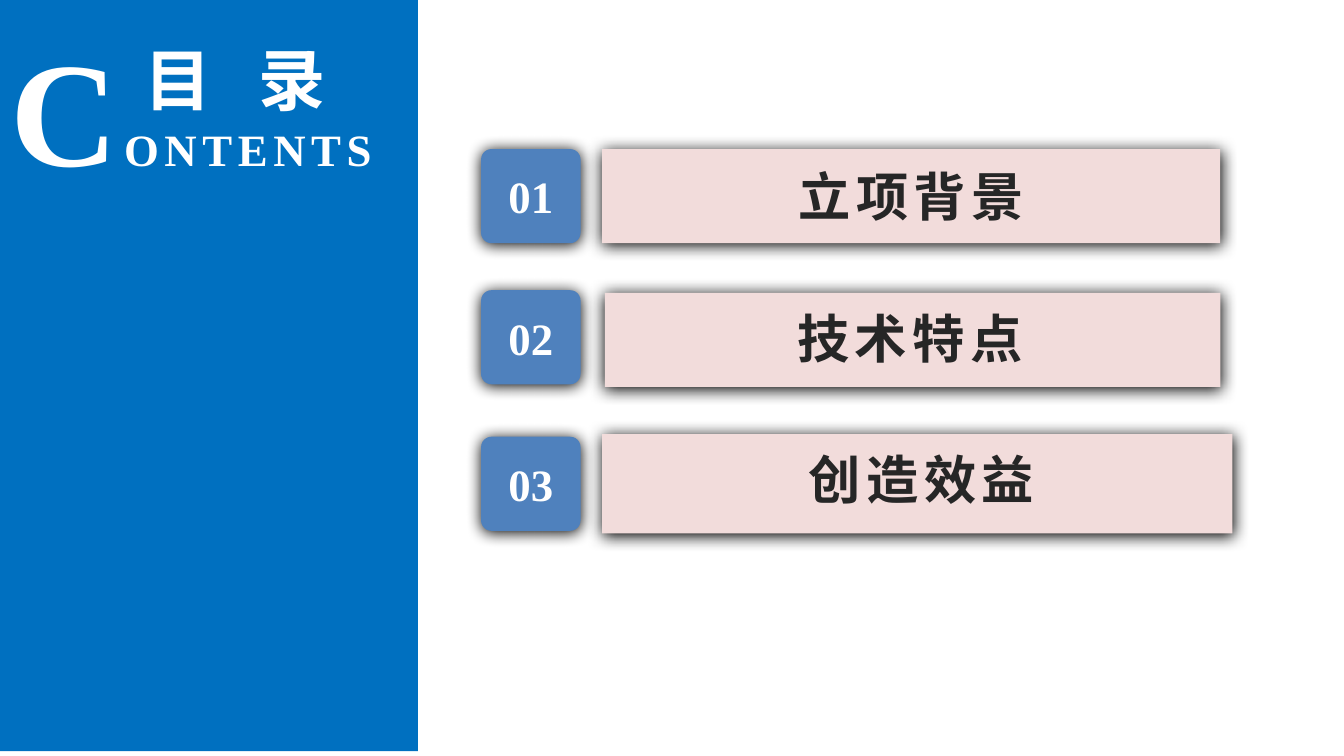
from lxml import etree
from pptx import Presentation
from pptx import util as u
from pptx.dml import color
from pptx.enum import shapes, text
from pptx.oxml import ns

PX = 4572
LATIN = "Times New Roman"
CHINESE = "Noto Sans CJK SC"


def px(*lengths):
    """Turn lengths in px, 200 to the inch, into EMU."""
    return [u.Emu(length * PX) for length in lengths]


def rgb(value):
    """Return the colour for a hex string."""
    return color.RGBColor.from_string(value)


def add_shadow(shape):
    """Give a shape a soft black shadow that falls downwards."""
    effects = shape._element.spPr.find(ns.qn("a:effectLst"))
    shadow = etree.SubElement(
        effects, ns.qn("a:outerShdw"), blurRad=str(u.Pt(8.5)), dist=str(u.Pt(1)),
        dir="5400000", algn="ctr", rotWithShape="0")
    etree.SubElement(shadow, ns.qn("a:srgbClr"), val="000000")


def add_block(slide, box, fill, kind=shapes.MSO_SHAPE.RECTANGLE, shadow=True):
    """Draw a filled shape without an outline."""
    shape = slide.shapes.add_shape(kind, *px(*box))
    shape.shadow.inherit = False
    shape.fill.solid()
    shape.fill.fore_color.rgb = rgb(fill)
    shape.line.fill.background()
    if shadow:
        add_shadow(shape)
    return shape


def add_text(slide, box, *pieces, font=LATIN, fill="FFFFFF", spacing=0,
             align=text.PP_ALIGN.CENTER):
    """Place one bold paragraph made of (wording, size) pieces."""
    frame = slide.shapes.add_textbox(*px(*box)).text_frame
    frame.word_wrap = True
    frame.auto_size = text.MSO_AUTO_SIZE.SHAPE_TO_FIT_TEXT
    paragraph = frame.paragraphs[0]
    paragraph.alignment = align
    for wording, size in pieces:
        run = paragraph.add_run()
        run.text = wording
        run.font.name = font
        run.font.size = u.Pt(size)
        run.font.bold = True
        run.font.color.rgb = rgb(fill)
        properties = run.font._element
        properties.set("spc", str(int(spacing * 100)))
        etree.SubElement(properties, ns.qn("a:ea"), typeface=CHINESE)


def add_title_panel(slide, box):
    """Draw the blue side panel with the title in two languages."""
    left, top, width, height = box
    justified = text.PP_ALIGN.JUSTIFY
    add_block(slide, box, "0070C0", shadow=False)
    add_text(slide, (left - 4, top + 20, width + 114, 290), ("C", 80), ("ONTENTS", 24),
             spacing=3, align=justified)
    add_text(slide, (left + 196, top + 51, 488, 142), ("目 录", 36),
             spacing=8.5, align=justified)


def add_badge(slide, box, number, label_drop):
    """Draw a rounded badge with its two-digit number."""
    left, top, width, height = box
    badge = add_block(slide, box, "4F81BD", shapes.MSO_SHAPE.ROUNDED_RECTANGLE)
    badge.adjustments[0] = 0.11
    add_text(slide, (left - 5, top + label_drop, width + 10, 100), (f"{number:02d}", 24))


def add_bar(slide, box, heading, label):
    """Draw a pink bar with a heading in the given label box (left, top, width)."""
    left, top, width, height = box
    label_left, label_top, label_width = label
    add_block(slide, box, "F2DCDB")
    add_text(slide, (left + label_left, top + label_top, label_width, 114),
             (heading, 28), font=CHINESE, fill="262626", spacing=3)


def main():
    """Build the contents slide."""
    presentation = Presentation()
    presentation.slide_width, presentation.slide_height = px(2000, 1125)
    slide = presentation.slides.add_slide(presentation.slide_layouts[6])
    add_title_panel(slide, (0, -4, 622, 1122))
    entries = [
        ("立项背景", (896, 222, 920, 140), (16, 12, 888), 222, 19),
        ("技术特点", (900, 436, 916, 140), (12, 10, 884), 432, 21),
        ("创造效益", (896, 646, 938, 148), (12, 9, 926), 650, 20),
    ]
    for number, (heading, bar, label, badge_top, label_drop) in enumerate(entries, 1):
        add_bar(slide, bar, heading, label)
        add_badge(slide, (716, badge_top, 148, 140), number, label_drop)
    presentation.save("out.pptx")


if __name__ == "__main__":
    main()
